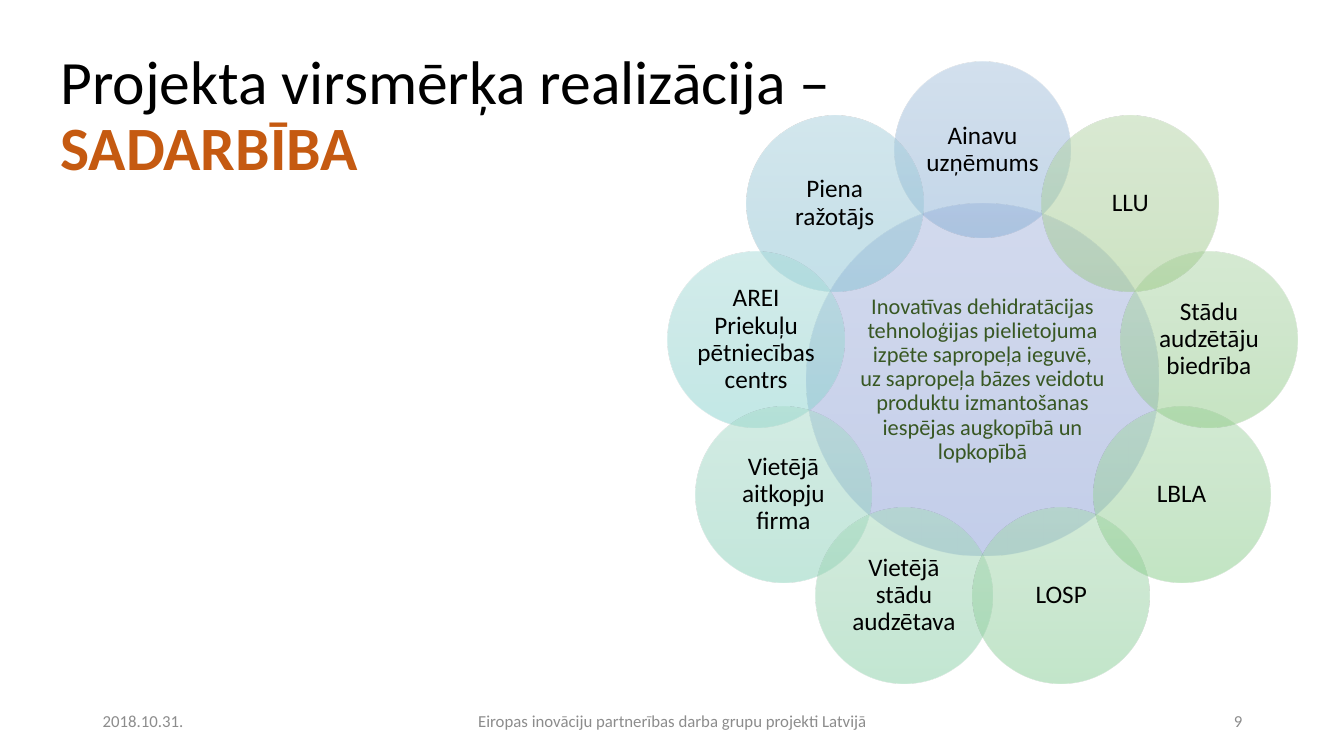
from math import cos, radians, sin

from lxml.etree import SubElement
from pptx import Presentation
from pptx.dml.color import RGBColor
from pptx.enum.shapes import MSO_SHAPE as Shape
from pptx.enum.text import MSO_ANCHOR as Anchor, MSO_AUTO_SIZE as AutoSize, PP_ALIGN as Align
from pptx.oxml.ns import qn
from pptx.util import Inches, Pt

FONT = "Calibri"
BLACK, ORANGE, GREEN, GRAY = "000000", "C55A11", "385723", "8C8C8C"

HUB_X, HUB_Y = 9.745, 3.765
HUB_SIZE, PETAL_SIZE, RING_RADIUS = 3.49, 1.75, 2.28
HUB_TEXT = (
    "Inovatīvas dehidratācijas tehnoloģijas pielietojuma izpēte sapropeļa ieguvē, "
    "uz sapropeļa bāzes veidotu produktu izmantošanas iespējas augkopībā un lopkopībā"
)
HUB_COLORS = ("A8B7DF", "9AABD9", "889ED7")

# Counter-clockwise from the top
PARTNERS = [
    ("Ainavu uzņēmums", ("A8C3DE", "9AB9D8", "88B0D6")),
    ("Piena ražotājs", ("A8D0DD", "9AC8D7", "88C3D4")),
    ("AREI Priekuļu pētniecības centrs", ("A8DCD9", "9AD5D2", "87D3CF")),
    ("Vietējā aitkopju firma", ("A8DBCA", "9AD4C1", "87D1B9")),
    ("Vietējā stādu audzētava", ("A7DABC", "9AD3B2", "87D0A6")),
    ("LOSP", ("A7D8B1", "9AD2A5", "87CE96")),
    ("LBLA", ("A7D7A9", "9AD09B", "87CD89")),
    ("Stādu audzētāju biedrība", ("ADD6A7", "A0CF9A", "8FCB87")),
    ("LLU", ("B5D5A7", "AACE9A", "9CC987")),
]

FOOTERS = [
    ("2018.10.31.", 0.92, 3, Align.LEFT),
    ("Eiropas inovāciju partnerības darba grupu projekti Latvijā", 4.42, 4.5, Align.CENTER),
    ("9", 9.42, 3, Align.RIGHT),
]


def rgb(color):
    return RGBColor.from_string(color)


def add_span(para, text, size, color, bold=False):
    span = para.add_run()
    span.text = text
    span.font.name = FONT
    span.font.size = Pt(size)
    span.font.bold = bold
    span.font.color.rgb = rgb(color)


def set_glass_fill(shape, colors):
    """Fill from top to bottom with evenly spaced, half-transparent colours."""
    shape.fill.gradient()
    shape.fill.gradient_angle = 270
    stops = shape.element.spPr.find(qn("a:gradFill")).find(qn("a:gsLst"))
    for stop in list(stops):
        stops.remove(stop)
    for index, color in enumerate(colors):
        position = 100000 * index // (len(colors) - 1)
        stop = SubElement(stops, qn("a:gs"), pos=str(position))
        tint = SubElement(stop, qn("a:srgbClr"), val=color)
        SubElement(tint, qn("a:alpha"), val="50000")


def add_circle(page, center_x, center_y, diameter, colors, text, size, color, inset):
    circle = page.shapes.add_shape(
        Shape.OVAL, Inches(center_x - diameter / 2), Inches(center_y - diameter / 2),
        Inches(diameter), Inches(diameter))
    circle.shadow.inherit = False
    circle.line.fill.background()
    set_glass_fill(circle, colors)
    frame = circle.text_frame
    frame.word_wrap = True
    frame.vertical_anchor = Anchor.MIDDLE
    frame.margin_left = frame.margin_right = Inches(inset)
    frame.margin_top = frame.margin_bottom = Inches(inset)
    para = frame.paragraphs[0]
    para.alignment = Align.CENTER
    para.line_spacing = 0.9
    add_span(para, text, size, color)


def add_flower(page):
    add_circle(page, HUB_X, HUB_Y, HUB_SIZE, HUB_COLORS, HUB_TEXT, 16, GREEN, 0.02)
    for index, (name, colors) in enumerate(PARTNERS):
        angle = radians(360 / len(PARTNERS) * index)
        add_circle(page, HUB_X - RING_RADIUS * sin(angle), HUB_Y - RING_RADIUS * cos(angle),
                   PETAL_SIZE, colors, name, 18, BLACK, 0.03)


def set_title(page):
    title = page.shapes.title
    title.left, title.top = Inches(0.5), Inches(0.44)
    title.width, title.height = Inches(8.42), Inches(1.45)
    frame = title.text_frame
    frame.word_wrap = True
    frame.auto_size = AutoSize.NONE
    frame.vertical_anchor = Anchor.MIDDLE
    para = frame.paragraphs[0]
    para.alignment = Align.LEFT
    para.line_spacing = 0.9
    add_span(para, "Projekta virsmērķa realizācija –", 44, BLACK)
    para.add_line_break()
    add_span(para, "SADARBĪBA", 44, ORANGE, bold=True)


def add_footer(page, text, left, width, alignment):
    box = page.shapes.add_textbox(Inches(left), Inches(6.95), Inches(width), Inches(0.4))
    box.text_frame.word_wrap = True
    box.text_frame.vertical_anchor = Anchor.MIDDLE
    para = box.text_frame.paragraphs[0]
    para.alignment = alignment
    add_span(para, text, 12, GRAY)


def main():
    deck = Presentation()
    deck.slide_width, deck.slide_height = Inches(13.33), Inches(7.5)
    page = deck.slides.add_slide(deck.slide_layouts.get_by_name("Title Only"))
    set_title(page)
    add_flower(page)
    for footer in FOOTERS:
        add_footer(page, *footer)
    deck.save("out.pptx")


if __name__ == "__main__":
    main()
